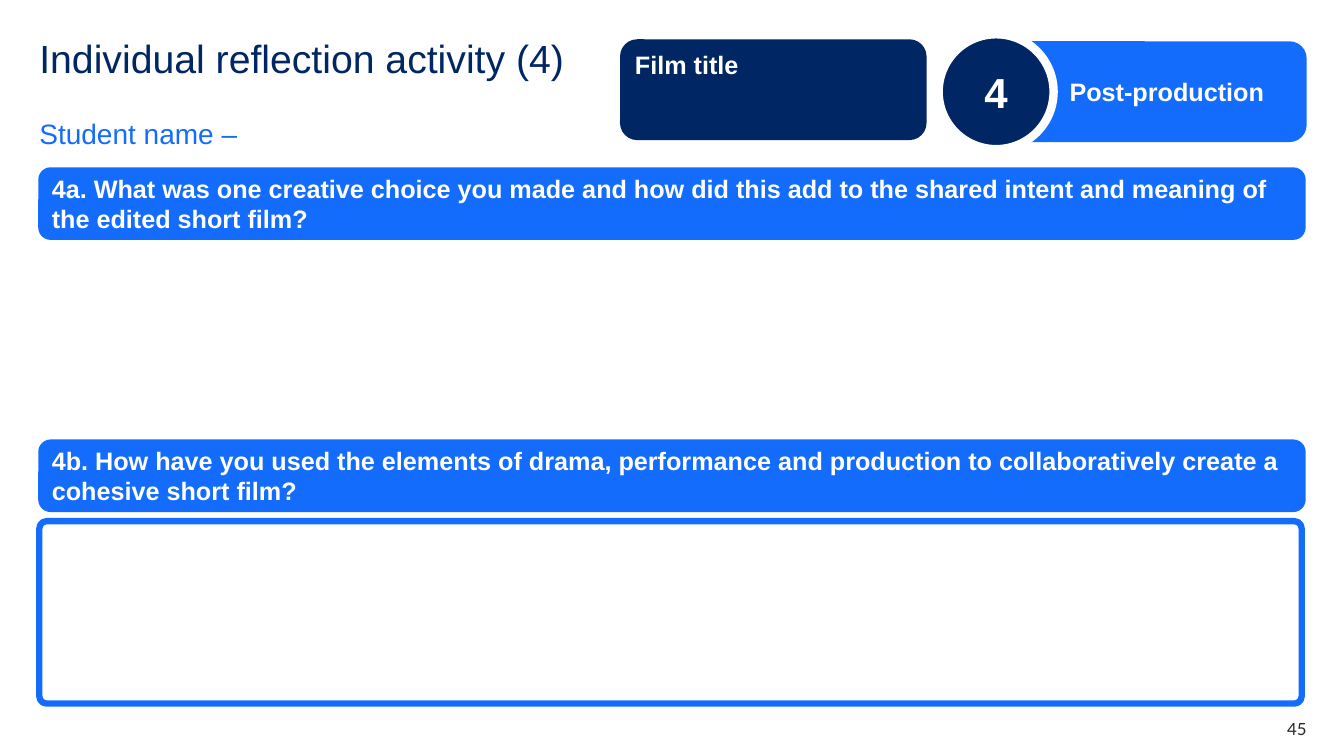
import pptx
import pptx.dml.color
import pptx.enum.shapes
import pptx.enum.text
import pptx.oxml
import pptx.oxml.ns
import pptx.util
from pptx.util import Inches

SHAPE = pptx.enum.shapes.MSO_SHAPE
ANCHOR = pptx.enum.text.MSO_ANCHOR
ALIGN = pptx.enum.text.PP_ALIGN
COLORS = {"navy": "002664", "blue": "146CFD", "white": "FFFFFF", "ink": "22272B"}


def rgb(name):
    return pptx.dml.color.RGBColor.from_string(COLORS[name])


class ReflectionSlide:
    """Builds the parts of a reflection slide in one shared style."""

    def __init__(self, prs):
        self.font = "Arial"
        self.s = prs.slides.add_slide(prs.slide_layouts[1])
        self.s.background.fill.solid()
        self.s.background.fill.fore_color.rgb = rgb("white")

    def set_text(self, sp, text, size, color, bold=False, font=None,
                 anchor=ANCHOR.MIDDLE, inset=None, **para):
        tf = sp.text_frame
        frame = {"word_wrap": True, "vertical_anchor": anchor,
                 "auto_size": pptx.enum.text.MSO_AUTO_SIZE.NONE}
        if inset is not None:
            for side in ("left", "top", "right", "bottom"):
                frame["margin_" + side] = Inches(inset)
        for name, value in frame.items():
            setattr(tf, name, value)
        p = tf.paragraphs[0]
        for name, value in {"alignment": ALIGN.LEFT, **para}.items():
            setattr(p, name, value)
        r = p.add_run()
        r.text = text
        style = {"name": font or self.font, "size": pptx.util.Pt(size), "bold": bold}
        for name, value in style.items():
            setattr(r.font, name, value)
        r.font.color.rgb = rgb(color)
        return p

    def placeholder(self, idx, box, text, size, color, **fmt):
        sp = self.s.placeholders[idx]
        for name, value in zip(("left", "top", "width", "height"), box):
            setattr(sp, name, Inches(value))
        p = self.set_text(sp, text, size, color, inset=0, **fmt)
        pPr = p._p.get_or_add_pPr()
        pPr.set("marL", "0")
        pPr.set("indent", "0")
        pPr.append(pptx.oxml.parse_xml("<a:buNone %s/>" % pptx.oxml.ns.nsdecls("a")))

    def shape(self, box, fill, kind=SHAPE.ROUNDED_RECTANGLE, corner=0.17,
              line=None, weight=0):
        sp = self.s.shapes.add_shape(kind, *map(Inches, box))
        sp.shadow.inherit = False
        sp.fill.solid()
        sp.fill.fore_color.rgb = rgb(fill)
        if kind == SHAPE.ROUNDED_RECTANGLE:
            sp.adjustments[0] = corner
        if line:
            sp.line.color.rgb = rgb(line)
            sp.line.width = pptx.util.Pt(weight)
        else:
            sp.line.fill.background()
        return sp

    def label(self, box, fill, text, **fmt):
        return self.set_text(self.shape(box, fill), text, 18, "white", bold=True, **fmt)

    def badge(self, box, text):
        sp = self.shape(box, "navy", SHAPE.OVAL, line="white", weight=6)
        self.set_text(sp, text, 30, "white", bold=True, alignment=ALIGN.CENTER)

    def page_number(self, box, text):
        sp = self.s.shapes.add_textbox(*map(Inches, box))
        self.set_text(sp, text, 12, "ink", font="Lato", anchor=ANCHOR.TOP, inset=0,
                      alignment=ALIGN.RIGHT)


def main():
    prs = pptx.Presentation()
    prs.slide_width, prs.slide_height = Inches(13.33), Inches(7.5)
    page = ReflectionSlide(prs)
    page.placeholder(0, (0.39, 0.39, 5.63, 0.6), "Individual reflection activity (4)",
                     28, "navy", anchor=ANCHOR.TOP, line_spacing=0.9)
    page.placeholder(1, (0.39, 1.07, 5.63, 0.34), "Student name –", 20, "blue",
                     line_spacing=1.5, space_before=0, space_after=pptx.util.Pt(12))
    page.label((6.15, 0.39, 3.04, 1), "navy", "Film title", anchor=ANCHOR.TOP)
    stage = page.label((10.06, 0.41, 2.9, 1), "blue", "Post-production")
    stage._p.get_or_add_pPr().set("marL", str(Inches(0.4)))
    page.badge((9.31, 0.34, 1.14, 1.14), "4")
    questions = (
        "4a. What was one creative choice you made and how did this add to the "
        "shared intent and meaning of the edited short film?",
        "4b. How have you used the elements of drama, performance and production "
        "to collaboratively create a cohesive short film?",
    )
    for i, question in enumerate(questions):
        page.label((0.38, 1.66 + 2.7 * i, 12.57, 0.72), "blue", question)
    page.shape((0.39, 5.17, 12.52, 1.81), "white", corner=0.04, line="blue", weight=4.5)
    page.page_number((12.17, 7.13, 0.79, 0.2), "45")
    prs.save("out.pptx")


if __name__ == "__main__":
    main()
